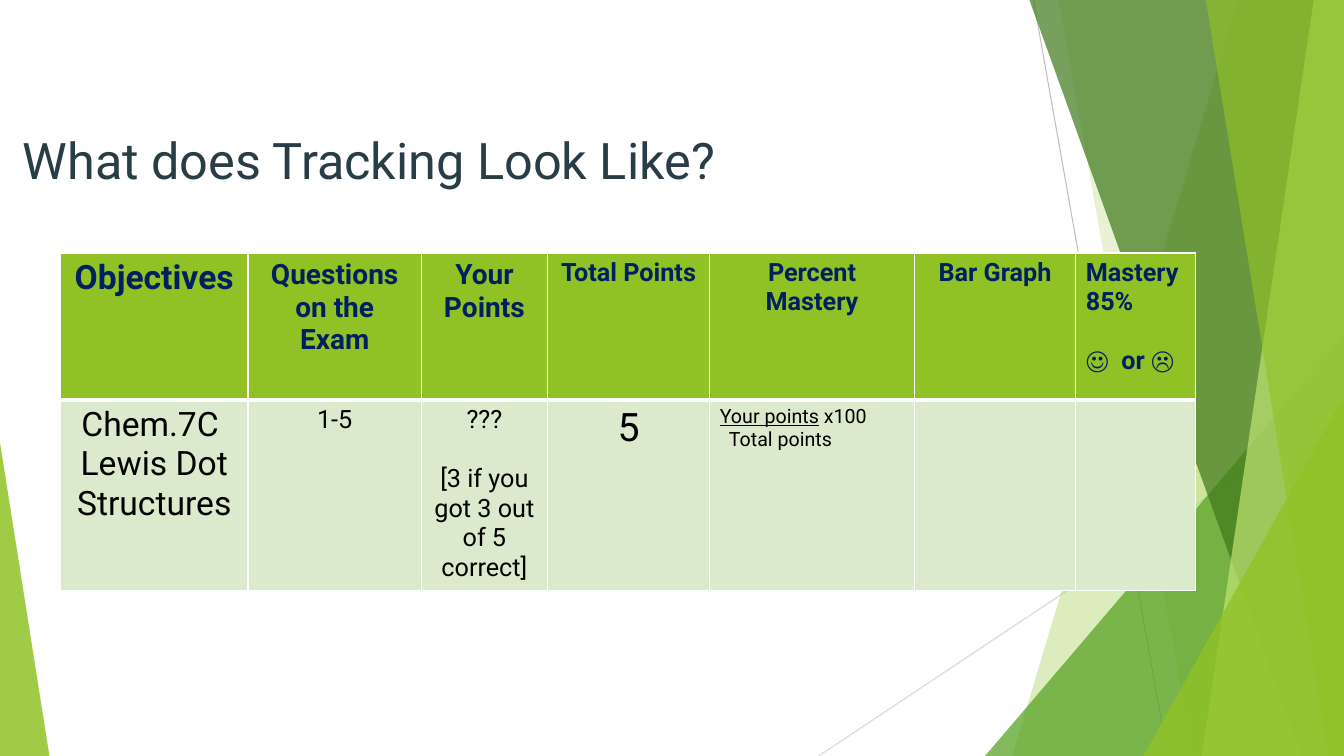
from dataclasses import dataclass

from lxml.etree import SubElement
from pptx import Presentation
from pptx.dml.color import RGBColor
from pptx.enum.shapes import MSO_CONNECTOR as Connector, MSO_SHAPE as Preset
from pptx.enum.text import MSO_ANCHOR as Anchor, PP_ALIGN as Align
from pptx.oxml.ns import qn
from pptx.util import Inches, Pt

FONT = "Roboto"
WIDTH, HEIGHT = 13.33, 7.5
BLACK = RGBColor(0x00, 0x00, 0x00)
WHITE = RGBColor(0xFF, 0xFF, 0xFF)
NAVY = RGBColor(0x00, 0x20, 0x60)
SLATE = RGBColor(0x29, 0x3D, 0x46)
LIME = RGBColor(0x90, 0xC2, 0x26)
LEAF = RGBColor(0x54, 0xA0, 0x21)
FOREST = RGBColor(0x3F, 0x78, 0x19)
PALE_LIME = RGBColor(0xC0, 0xE4, 0x74)
PALE_GREEN = RGBColor(0xDB, 0xE9, 0xCD)
GREY = RGBColor(0xBF, 0xBF, 0xBF)
LIGHT_GREY = RGBColor(0xD9, 0xD9, 0xD9)


@dataclass
class Ray:
    start: tuple[float, float]
    end: tuple[float, float]
    color: RGBColor


@dataclass
class Band:
    """A facet from a slanted left side to the right slide edge."""
    top_x: float
    bottom_x: float
    color: RGBColor
    opacity: int


@dataclass
class Wedge:
    """A right triangle standing on the bottom slide edge."""
    left: float
    top: float
    width: float
    apex: float
    color: RGBColor
    opacity: int


@dataclass
class Line:
    """One paragraph of a table cell."""
    text: str
    size: int = 18
    align: Align | None = Align.CENTER
    gap: float = 0
    indent: float = 0
    underlined: str = ""


RAYS = [
    Ray((10.25, 0), (11.58, HEIGHT), GREY),
    Ray((WIDTH, 4.03), (8.12, HEIGHT), LIGHT_GREY),
]
FACETS = [
    Band(12.28, 10.04, LIME, 30),
    Band(10.5, 11.83, LIME, 20),
    Wedge(9.77, 3.33, 3.56, 1, LEAF, 72),
    Band(10.21, 12.91, FOREST, 70),
    Band(13.03, 11.92, PALE_LIME, 70),
    Band(11.96, 13.18, LIME, 65),
    Wedge(11.34, 3.93, 1.99, 1, LIME, 80),
    Wedge(0, 4.39, 0.49, 0, LIME, 85),
]
COLUMNS = [1.86, 1.72, 1.25, 1.61, 2.03, 1.6, 1.19]
ROWS = [1.46, 1.86]
HEADER = [
    [Line("Objectives", 24)],
    [Line("Questions on the Exam", 20)],
    [Line("Your Points", 20)],
    [Line("Total Points")],
    [Line("Percent Mastery")],
    [Line("Bar Graph")],
    [Line("Mastery", align=None), Line("85%", align=None),
     Line("☺  or ☹", align=None, gap=21)],
]
BODY = [
    [Line("Chem.7C ", 24), Line("Lewis Dot Structures", 24)],
    [Line("1-5")],
    [Line("???"), Line("[3 if you got 3 out of 5 correct]", gap=21)],
    [Line("5", 28)],
    [Line(" x100", 14, None, underlined="Your points"),
     Line("Total points", 14, None, indent=0.09)],
    [],
    [],
]


def paint(shape, color: RGBColor, opacity: int) -> None:
    shape.shadow.inherit = False
    shape.line.fill.background()
    shape.fill.solid()
    shape.fill.fore_color.rgb = color
    tint = shape.fill._xPr.find(".//" + qn("a:srgbClr"))
    SubElement(tint, qn("a:alpha"), val=str(opacity * 1000))


def draw_ray(page, ray: Ray) -> None:
    ends = [Inches(value) for value in (*ray.start, *ray.end)]
    line = page.shapes.add_connector(Connector.STRAIGHT, *ends)
    line.line.color.rgb = ray.color
    line.line.width = Pt(0.75)
    SubElement(line._element.spPr, qn("a:effectLst"))


def draw_facet(page, facet: Band | Wedge) -> None:
    if isinstance(facet, Band):
        corners = [(WIDTH, 0), (WIDTH, HEIGHT), (facet.bottom_x, HEIGHT)]
        outline = page.shapes.build_freeform(Inches(facet.top_x), 0)
        outline.add_line_segments([(Inches(x), Inches(y)) for x, y in corners])
        shape = outline.convert_to_shape()
    else:
        shape = page.shapes.add_shape(
            Preset.ISOSCELES_TRIANGLE, Inches(facet.left), Inches(facet.top),
            Inches(facet.width), Inches(HEIGHT - facet.top))
        shape.adjustments[0] = facet.apex
    paint(shape, facet.color, facet.opacity)


def style(span, size: int, color: RGBColor, bold: bool = False) -> None:
    span.font.name = FONT
    span.font.size = Pt(size)
    span.font.bold = bold
    span.font.color.rgb = color


def draw_title(page, text: str) -> None:
    box = page.shapes.add_textbox(Inches(0), Inches(1.23), Inches(7.32), Inches(1.49))
    box.text_frame.word_wrap = True
    box.text_frame.vertical_anchor = Anchor.TOP
    box.text_frame.text = text
    para = box.text_frame.paragraphs[0]
    para.alignment = Align.CENTER
    style(para.runs[0], 36, SLATE)


def add_borders(cell, top: int, bottom: int) -> None:
    sides = {"L": 1, "R": 1, "T": top, "B": bottom}
    properties = cell._tc.get_or_add_tcPr()
    for place, (side, points) in enumerate(sides.items()):
        border = SubElement(properties, qn(f"a:ln{side}"), w=str(Pt(points)))
        solid = SubElement(border, qn("a:solidFill"))
        SubElement(solid, qn("a:srgbClr"), val=str(WHITE))
        properties.insert(place, border)


def fill_cell(cell, lines: list[Line], is_header: bool) -> None:
    cell.fill.solid()
    cell.fill.fore_color.rgb = LIME if is_header else PALE_GREEN
    add_borders(cell, top=1 if is_header else 3, bottom=3 if is_header else 1)
    frame = cell.text_frame
    for number, line in enumerate(lines):
        para = frame.add_paragraph() if number else frame.paragraphs[0]
        para.text = line.underlined or line.text
        if line.underlined:
            para.runs[0].font.underline = True
            para.add_run().text = line.text
        para.alignment = line.align
        if line.gap:
            para.space_before = Pt(line.gap)
        if line.indent:
            para._p.get_or_add_pPr().set("marL", str(Inches(line.indent)))
        for span in para.runs:
            style(span, line.size, NAVY if is_header else BLACK, is_header)


def draw_table(page) -> None:
    frame = page.shapes.add_table(
        len(ROWS), len(COLUMNS), Inches(0.6), Inches(2.51),
        Inches(sum(COLUMNS)), Inches(sum(ROWS)))
    table = frame.table
    table.horz_banding = False
    for column, width in zip(table.columns, COLUMNS):
        column.width = Inches(width)
    for row, height, contents in zip(table.rows, ROWS, (HEADER, BODY)):
        row.height = Inches(height)
        for cell, lines in zip(row.cells, contents):
            fill_cell(cell, lines, contents is HEADER)


def main() -> None:
    deck = Presentation()
    deck.slide_width, deck.slide_height = Inches(WIDTH), Inches(HEIGHT)
    page = deck.slides.add_slide(deck.slide_layouts[6])
    # Background facets
    for ray in RAYS:
        draw_ray(page, ray)
    for facet in FACETS:
        draw_facet(page, facet)
    # Title and tracking table
    draw_title(page, "What does Tracking Look Like?")
    draw_table(page)
    deck.save("out.pptx")


if __name__ == "__main__":
    main()
